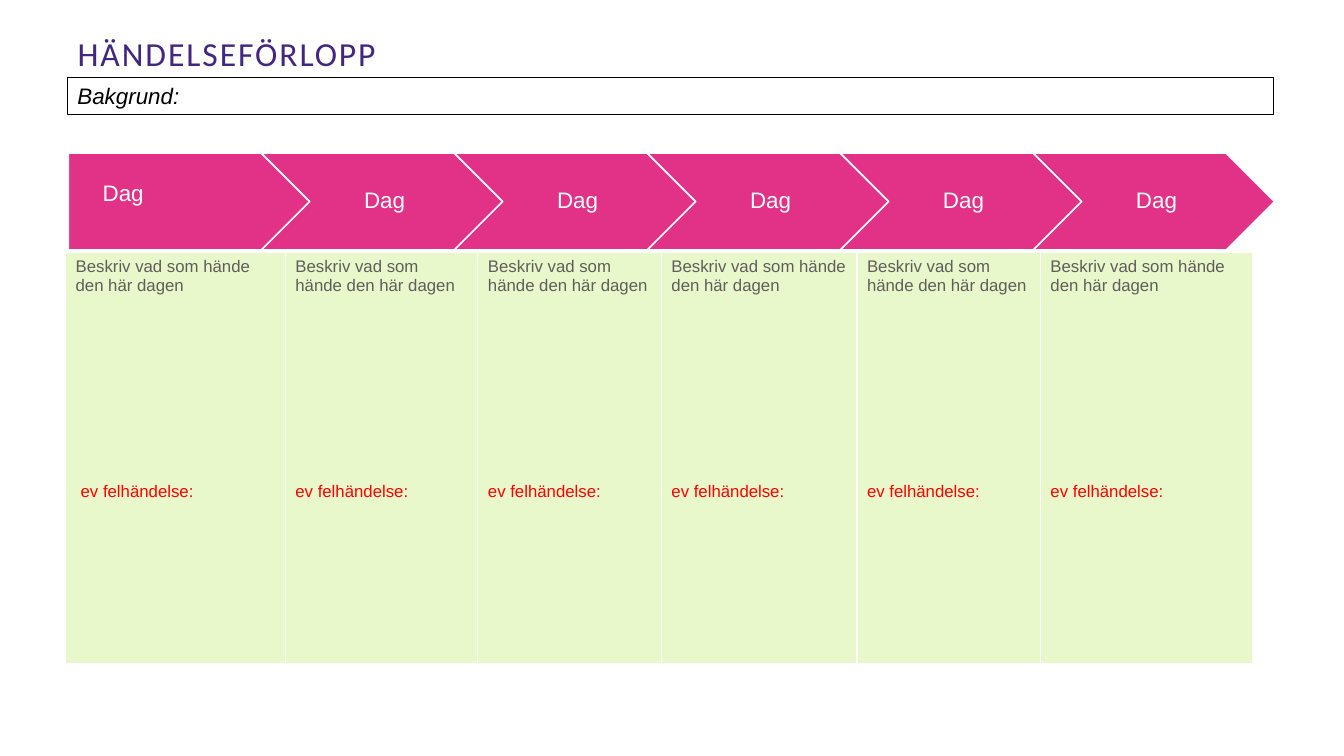
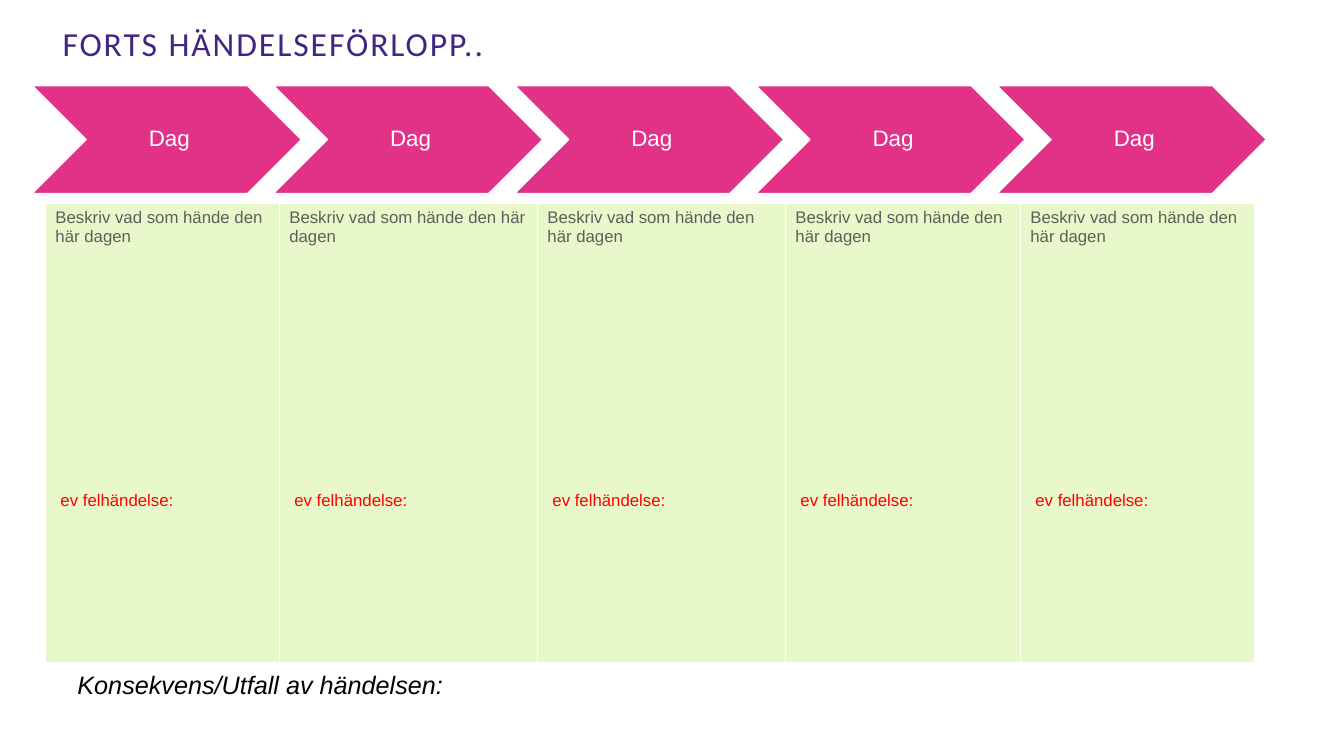
from dataclasses import dataclass

from lxml.etree import SubElement
from pptx import Presentation
from pptx.dml.color import RGBColor
from pptx.enum.shapes import MSO_SHAPE as Shape
from pptx.enum.text import MSO_ANCHOR as Anchor, MSO_AUTO_SIZE as AutoSize, PP_ALIGN as Align
from pptx.oxml.ns import qn
from pptx.util import Emu, Pt

PX = 9144


@dataclass(frozen=True)
class Theme:
    """Colours, fonts and type sizes shared by the slides."""
    title: str = "412682"
    arrow: str = "E13288"
    cell: str = "E8F8CA"
    prompt: str = "605D5B"
    error: str = "FF0000"
    ink: str = "000000"
    paper: str = "FFFFFF"
    title_font: str = "Calibri"
    body_font: str = "Arial"
    title_size: int = 24
    outcome_size: int = 18
    label_size: int = 16
    cell_size: int = 12


THEME = Theme()
TITLE_ONLY = 5
DAY = "Dag"
PROMPT = "Beskriv vad som hände den här dagen"
ERROR = "ev felhändelse:"


def px(length):
    """Turn px into EMU."""
    return Emu(round(length * PX))


def place(box):
    """Turn a px box of left, top, width and height into EMU."""
    return [px(length) for length in box]


def colour(value):
    """Turn a hex string into a colour."""
    return RGBColor.from_string(value)


def style(paragraph, size, value, name=THEME.body_font, italic=False):
    """Format the runs of a paragraph."""
    for run in paragraph.runs:
        run.font.name = name
        run.font.size = Pt(size)
        run.font.italic = italic
        run.font.color.rgb = colour(value)


def add_titled_slide(presentation, text, box):
    """Add a slide with its title placed in the box."""
    slide = presentation.slides.add_slide(presentation.slide_layouts[TITLE_ONLY])
    title = slide.shapes.title
    title.left, title.top, title.width, title.height = place(box)
    frame = title.text_frame
    frame.text = text
    frame.auto_size = AutoSize.NONE
    frame.vertical_anchor = Anchor.BOTTOM
    paragraph = frame.paragraphs[0]
    paragraph.alignment = Align.LEFT
    style(paragraph, THEME.title_size, THEME.title, THEME.title_font)
    paragraph.runs[0].font._element.set("spc", "140")
    return slide


def add_label(slide, text, box, size, value=THEME.ink, italic=True, framed=False):
    """Add a line of text, with a thin frame if asked."""
    label = slide.shapes.add_textbox(*place(box))
    label.text_frame.word_wrap = True
    label.text_frame.text = text
    style(label.text_frame.paragraphs[0], size, value, italic=italic)
    if framed:
        label.line.color.rgb = colour(THEME.ink)
        label.line.width = Pt(0.75)


def add_arrow(slide, kind, box, text, inset):
    """Add one arrow of the day row."""
    arrow = slide.shapes.add_shape(kind, *place(box))
    arrow.shadow.inherit = False
    arrow.fill.solid()
    arrow.fill.fore_color.rgb = colour(THEME.arrow)
    arrow.line.color.rgb = colour(THEME.paper)
    arrow.line.width = Pt(1)
    if not text:
        return
    frame = arrow.text_frame
    frame.margin_left, frame.margin_right = px(7), px(2)
    frame.margin_top = frame.margin_bottom = px(inset)
    frame.vertical_anchor = Anchor.MIDDLE
    frame.text = text
    paragraph = frame.paragraphs[0]
    paragraph.alignment = Align.CENTER
    paragraph.line_spacing = 0.9
    style(paragraph, THEME.label_size, THEME.paper)


def add_day_row(slide, box, count, arrow_width, inset, flat_start=False):
    """Spread arrows evenly over the box, the first one flat and labelled apart if asked."""
    left, top, width, height = box
    pitch = (width - arrow_width) / (count - 1)
    for index in range(count):
        flat = flat_start and index == 0
        kind = Shape.PENTAGON if flat else Shape.CHEVRON
        arrow_box = (left + index * pitch, top, arrow_width, height)
        add_arrow(slide, kind, arrow_box, "" if flat else DAY, inset)
    if flat_start:
        add_label(slide, DAY, (left + 24, top + 21, 158, 64), THEME.label_size, THEME.paper, False)


def add_borders(cell):
    """Give a cell white borders, the lower one heavier."""
    properties = cell._tc.get_or_add_tcPr()
    for side, points in (("L", 1), ("R", 1), ("T", 1), ("B", 3)):
        line = SubElement(properties, qn(f"a:ln{side}"), w=str(Pt(points)))
        fill = SubElement(line, qn("a:solidFill"))
        SubElement(fill, qn("a:srgbClr"), val=THEME.paper)


def fill_cell(cell, gap, indent):
    """Write the prompt and, a gap below it, the error line."""
    add_borders(cell)
    cell.fill.solid()
    cell.fill.fore_color.rgb = colour(THEME.cell)
    cell.text_frame.text = PROMPT
    style(cell.text_frame.paragraphs[0], THEME.cell_size, THEME.prompt)
    error = cell.text_frame.add_paragraph()
    error._p.get_or_add_pPr().set("marL", str(px(indent)))
    error.text = ERROR
    error.space_before = Pt(gap)
    style(error, THEME.cell_size, THEME.error)


def add_day_table(slide, left, top, height, widths, gap, indents):
    """Add the one-row table with a column for each day."""
    box = (left, top, sum(widths), height)
    table = slide.shapes.add_table(1, len(widths), *place(box)).table
    table.first_row = table.horz_banding = False
    table.rows[0].height = px(height)
    for column, width, cell, indent in zip(table.columns, widths, table.rows[0].cells, indents):
        column.width = px(width)
        fill_cell(cell, gap, indent)


def add_course_slide(presentation):
    """Build the first slide of the course of events."""
    slide = add_titled_slide(presentation, "HÄNDELSEFÖRLOPP", (67, 10, 1058, 68))
    add_label(slide, "Bakgrund:", (67, 77, 1196, 37), THEME.label_size, framed=True)
    add_day_row(slide, (68, 152, 1196, 96), 6, 239, 5, flat_start=True)
    widths = (218, 191, 182, 194, 182, 210)
    add_day_table(slide, 65, 250, 410, widths, 134, (5, 0, 0, 0, 0, 0))


def add_continued_slide(presentation):
    """Build the slide that continues the course of events."""
    slide = add_titled_slide(presentation, "FORTS HÄNDELSEFÖRLOPP..", (52, 19, 1058, 49))
    add_day_row(slide, (32, 85, 1224, 107), 5, 267, 2)
    widths = (232, 256, 246, 233, 232)
    add_day_table(slide, 45, 202, 457, widths, 175, (5,) * len(widths))
    add_label(slide, "Konsekvens/Utfall av händelsen:", (67, 659, 1034, 40), THEME.outcome_size)


def main():
    """Build and save the presentation."""
    presentation = Presentation()
    presentation.slide_width, presentation.slide_height = px(1333), px(750)
    add_course_slide(presentation)
    add_continued_slide(presentation)
    presentation.save("out.pptx")


if __name__ == "__main__":
    main()
